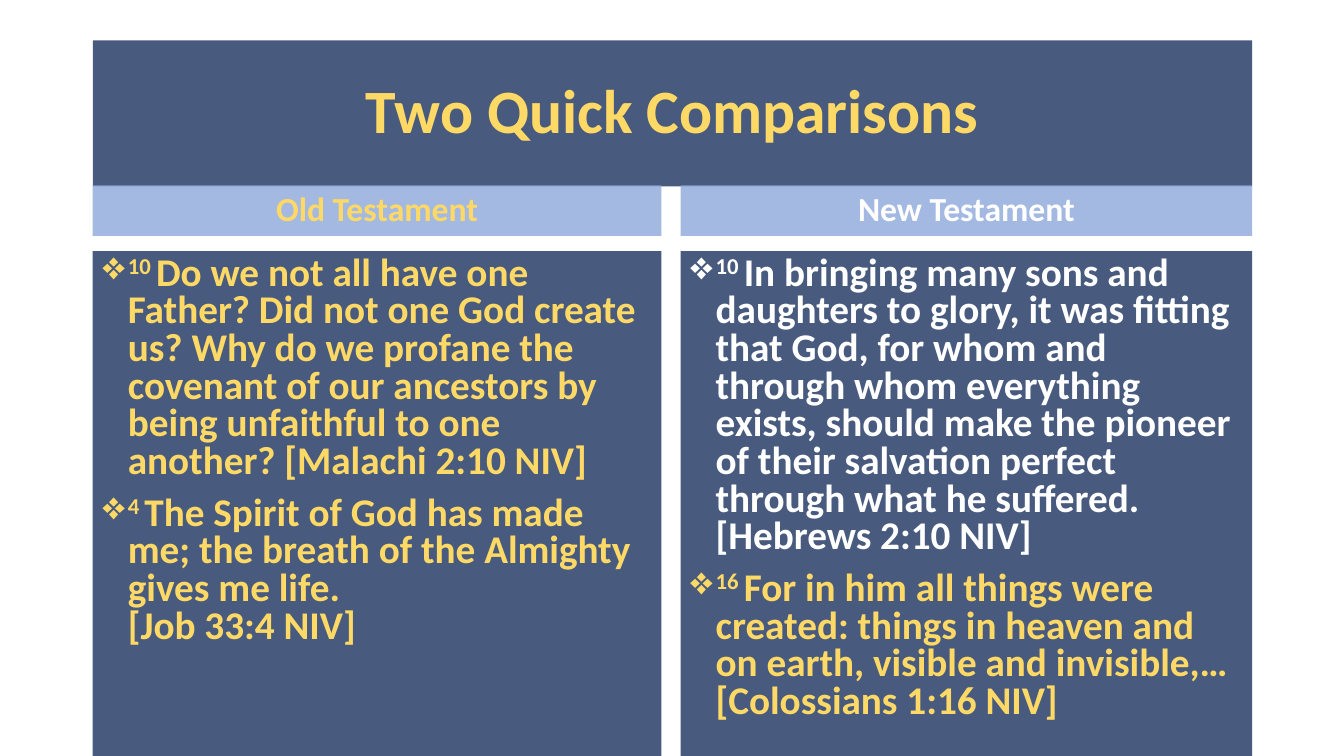
from lxml import etree
from pptx import Presentation
from pptx.dml.color import RGBColor
from pptx.enum.shapes import MSO_SHAPE
from pptx.enum.text import MSO_ANCHOR, MSO_AUTO_SIZE, PP_ALIGN
from pptx.oxml.ns import qn
from pptx.util import Inches, Pt

RECTANGLE = MSO_SHAPE.RECTANGLE
TOP, MIDDLE = MSO_ANCHOR.TOP, MSO_ANCHOR.MIDDLE
CENTER = PP_ALIGN.CENTER
NO_AUTOFIT = MSO_AUTO_SIZE.NONE

NAVY = RGBColor(0x20, 0x38, 0x64)
SKY = RGBColor(0x8F, 0xAA, 0xDC)
GOLD = RGBColor(0xFF, 0xD9, 0x66)
WHITE = RGBColor(0xFF, 0xFF, 0xFF)

# Each column: left, width, heading, heading colour, verses (number, text, colour)
COLUMNS = [
    (0.92, 5.64, "Old Testament", GOLD, [
        ("10", "Do we not all have one Father? Did not one God create us? Why do we "
               "profane the covenant of our ancestors by being unfaithful to one "
               "another? [Malachi 2:10 NIV]", GOLD),
        ("4", "The Spirit of God has made me; the breath of the Almighty gives me "
              "life. \n[Job 33:4 NIV]", GOLD),
    ]),
    (6.75, 5.67, "New Testament", WHITE, [
        ("10", "In bringing many sons and daughters to glory, it was fitting that "
               "God, for whom and through whom everything exists, should make the "
               "pioneer of their salvation perfect through what he "
               "suffered. [Hebrews 2:10 NIV]", WHITE),
        ("16", "For in him all things were created: things in heaven and on earth, "
               "visible and invisible,… [Colossians 1:16 NIV]", GOLD),
    ]),
]


class ComparisonSlide:
    font_name = "Calibri"
    opacity = 82

    def __init__(self, deck):
        self.page = deck.slides.add_slide(deck.slide_layouts[5])

    def fill(self, box, color):
        box.fill.solid()
        box.fill.fore_color.rgb = color
        tint = box.fill._xPr.find(qn("a:solidFill"))[0]
        etree.SubElement(tint, qn("a:alpha")).set("val", str(self.opacity * 1000))

    def style(self, span, size, color):
        span.font.name = self.font_name
        span.font.size = Pt(size)
        span.font.bold = True
        span.font.color.rgb = color

    def frame(self, box, anchor):
        frame = box.text_frame
        frame.word_wrap = True
        frame.auto_size = NO_AUTOFIT
        frame.vertical_anchor = anchor
        return frame

    def label(self, box, text, size, color):
        frame = self.frame(box, MIDDLE)
        frame.text = text
        para = frame.paragraphs[0]
        para.alignment = CENTER
        para.line_spacing = 0.9
        self.style(para.runs[0], size, color)

    def title(self, text, left, top, width, height):
        box = self.page.shapes.title
        box.left, box.top = Inches(left), Inches(top)
        box.width, box.height = Inches(width), Inches(height)
        self.fill(box, NAVY)
        self.label(box, text, 44, GOLD)

    def panel(self, left, top, width, height, color):
        box = self.page.shapes.add_shape(
            RECTANGLE, Inches(left), Inches(top), Inches(width), Inches(height))
        box.shadow.inherit = False
        box.line.fill.background()
        self.fill(box, color)
        return box

    def heading(self, text, left, top, width, height, color):
        self.label(self.panel(left, top, width, height, SKY), text, 24, color)

    def verses(self, verses, left, top, width, height):
        frame = self.frame(self.panel(left, top, width, height, NAVY), TOP)
        for index, (number, text, color) in enumerate(verses):
            para = frame.add_paragraph() if index else frame.paragraphs[0]
            self.bullet(para, 10 if index else 0)
            marker = para.add_run()
            marker.text = number + " "
            self.style(marker, 28, color)
            marker.font._element.set("baseline", "30000")
            for row, line in enumerate(text.split("\n")):
                if row:
                    para.add_line_break()
                span = para.add_run()
                span.text = line
                self.style(span, 28, color)

    def bullet(self, para, space_before):
        para.alignment = PP_ALIGN.LEFT
        para.line_spacing = 0.8
        para.space_before = Pt(space_before)
        properties = para._p.get_or_add_pPr()
        properties.set("marL", str(Inches(0.25)))
        properties.set("indent", str(-Inches(0.25)))
        etree.SubElement(properties, qn("a:buChar")).set("char", "❖")


def main():
    deck = Presentation()
    deck.slide_width, deck.slide_height = Inches(13.33), Inches(7.5)
    slide = ComparisonSlide(deck)

    # Title band
    slide.title("Two Quick Comparisons", 0.92, 0.4, 11.5, 1.45)

    # Two columns of verses under their headings
    for left, width, heading, color, verses in COLUMNS:
        slide.heading(heading, left, 1.84, width, 0.5, color)
        slide.verses(verses, left, 2.49, width, 5.09)

    deck.save("out.pptx")


if __name__ == "__main__":
    main()
